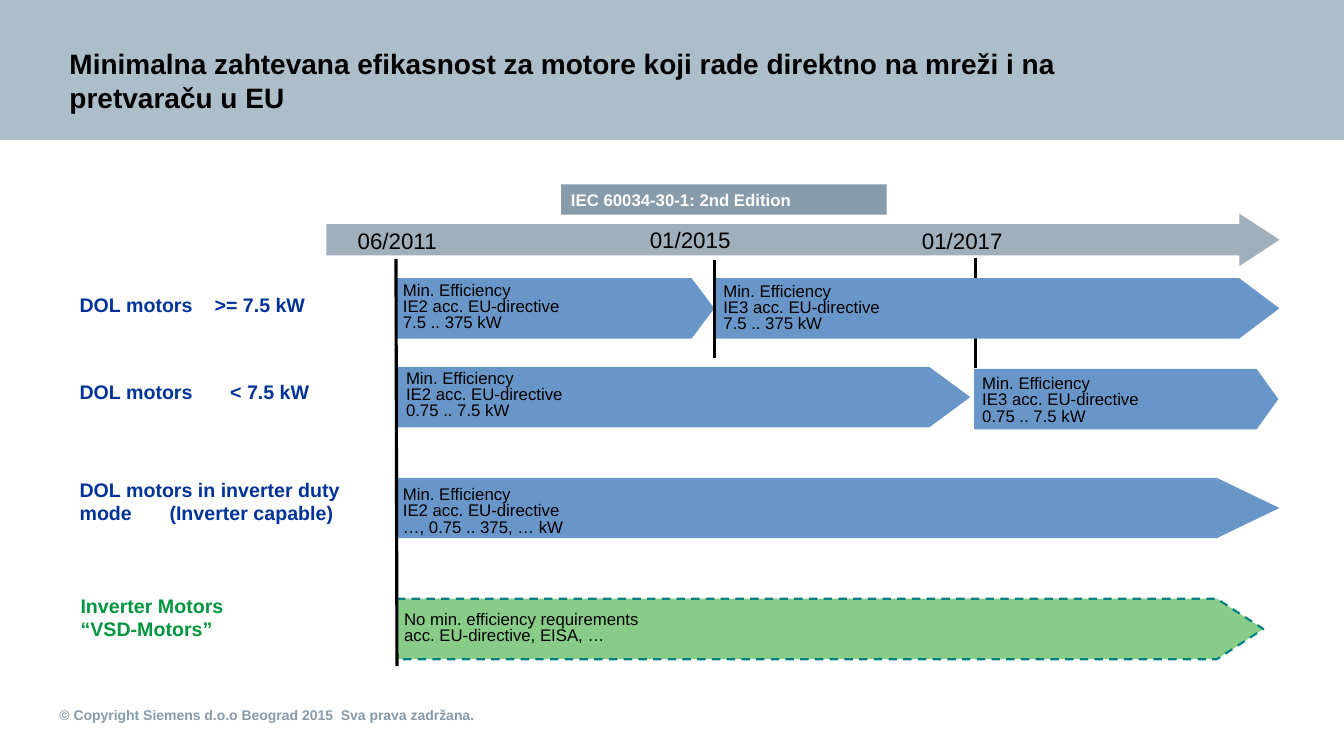
"""Builds the timeline slide of minimum motor efficiency requirements in the EU."""
from dataclasses import dataclass

from lxml import etree
from pptx import Presentation
from pptx.dml.color import RGBColor
from pptx.enum.dml import MSO_LINE
from pptx.enum.shapes import MSO_CONNECTOR, MSO_SHAPE
from pptx.enum.text import MSO_ANCHOR, PP_ALIGN
from pptx.oxml.ns import qn
from pptx.shapes.autoshape import Shape
from pptx.slide import Slide
from pptx.util import Pt

RECTANGLE = MSO_SHAPE.RECTANGLE
PENTAGON = MSO_SHAPE.PENTAGON
RIGHT_ARROW = MSO_SHAPE.RIGHT_ARROW
STRAIGHT = MSO_CONNECTOR.STRAIGHT
DASH = MSO_LINE.DASH
TOP, MIDDLE, BOTTOM = MSO_ANCHOR.TOP, MSO_ANCHOR.MIDDLE, MSO_ANCHOR.BOTTOM
LEFT = PP_ALIGN.LEFT

BLACK = RGBColor(0x00, 0x00, 0x00)
WHITE = RGBColor(0xFF, 0xFF, 0xFF)
BAND = RGBColor(0xAD, 0xBE, 0xCB)
SLATE = RGBColor(0x87, 0x9B, 0xAA)
BLUE = RGBColor(0x69, 0x96, 0xC8)
GREEN = RGBColor(0x88, 0xCC, 0x88)
TEAL = RGBColor(0x00, 0x80, 0x80)
NAVY = RGBColor(0x00, 0x33, 0x99)
LEAF = RGBColor(0x00, 0x96, 0x3F)

FONT = "Arial"
PAGE_WIDTH, PAGE_HEIGHT = 960.48, 540
BAND_HEIGHT = 100
PERIOD_HEIGHT = 43.2


@dataclass(frozen=True)
class Frame:
    left: float
    top: float
    width: float
    height: float


@dataclass(frozen=True)
class Period:
    left: float
    top: float
    width: float
    point: float
    caption: Frame
    text: str
    fill: RGBColor = BLUE
    outline: RGBColor | None = None


@dataclass(frozen=True)
class Label:
    frame: Frame
    text: str
    color: RGBColor = NAVY
    tab: float | None = None


@dataclass(frozen=True)
class Marker:
    left: float
    top: float
    bottom: float
    shift: float = 0


PERIODS = [
    Period(283, 198.7, 227.5, 0.377, Frame(282.2, 205.2, 193.7, 29.5),
           "Min. Efficiency\nIE2 acc. EU-directive\n7.5 .. 375 kW"),
    Period(511.2, 198.7, 403.2, 0.667, Frame(511.2, 203.8, 350.6, 33.8),
           "Min. Efficiency\nIE3 acc. EU-directive\n7.5 .. 375 kW"),
    Period(283.7, 262.1, 409.7, 0.678, Frame(284.4, 265, 346.3, 35.3),
           "Min. Efficiency\nIE2 acc. EU-directive\n0.75 .. 7.5 kW"),
    Period(696.2, 263.5, 217.4, 0.36, Frame(696.2, 267.8, 185.8, 37.4),
           "Min. Efficiency\nIE3 acc. EU-directive\n0.75 .. 7.5 kW"),
    Period(284.4, 341.3, 630, 1.042, Frame(282.2, 348.5, 535.7, 34.6),
           "Min. Efficiency\nIE2 acc. EU-directive\n…, 0.75 .. 375, … kW"),
    Period(283.7, 427.7, 619.2, 0.769, Frame(283, 429.8, 394.6, 38.2),
           "No min. efficiency requirements\nacc. EU-directive, EISA, …", GREEN, TEAL),
]

LABELS = [
    Label(Frame(56.9, 209.5, 191.5, 17.3), "DOL motors\t>= 7.5 kW", tab=96.5),
    Label(Frame(56.9, 271.4, 191.5, 17.3), "DOL motors\t< 7.5 kW", tab=107.6),
    Label(Frame(56.9, 341.3, 225.4, 33.8),
          "DOL motors in inverter duty mode\t(Inverter capable)", tab=64.3),
    Label(Frame(57.6, 424.1, 218.2, 33.8), "Inverter Motors\n“VSD-Motors”", LEAF),
]

DATES = [
    Label(Frame(255.6, 162, 56.9, 19.4), "06/2011", BLACK),
    Label(Frame(464.4, 161.3, 58.3, 19.4), "01/2015", BLACK),
    Label(Frame(658.8, 162, 58.3, 19.4), "01/2017", BLACK),
]

MARKER_2017 = Marker(697, 184.3, 262.8)
FRONT_MARKERS = [Marker(283, 185, 475.9, shift=0.7), Marker(510.5, 185.8, 255.6)]


def write(box: Shape, text: str, *, size: float, color: RGBColor = BLACK, bold: bool = False,
          anchor: MSO_ANCHOR = TOP, insets: tuple[float, float, float, float] = (0, 0, 0, 0),
          spacing: float | None = None, wrap: bool = True, tab: float | None = None) -> None:
    """Fill a box with text, one paragraph per line."""
    frame = box.text_frame
    frame.word_wrap = wrap
    frame.vertical_anchor = anchor
    frame.margin_left, frame.margin_top, frame.margin_right, frame.margin_bottom = map(Pt, insets)
    frame.text = text
    for para in frame.paragraphs:
        para.alignment = LEFT
        if spacing is not None:
            para.line_spacing = spacing
        if tab is not None:
            stops = etree.SubElement(para._p.get_or_add_pPr(), qn("a:tabLst"))
            etree.SubElement(stops, qn("a:tab"), pos=str(Pt(tab)), algn="l")
        para.font.name = FONT
        para.font.size = Pt(size)
        para.font.bold = bold
        para.font.color.rgb = color


def add_box(page: Slide, frame: Frame) -> Shape:
    """Add an empty text box."""
    return page.shapes.add_textbox(Pt(frame.left), Pt(frame.top), Pt(frame.width), Pt(frame.height))


def add_figure(page: Slide, kind: MSO_SHAPE, frame: Frame, fill: RGBColor,
               adjustments: tuple[float, ...] = ()) -> Shape:
    """Add a flat filled shape without outline."""
    figure = page.shapes.add_shape(
        kind, Pt(frame.left), Pt(frame.top), Pt(frame.width), Pt(frame.height))
    figure.shadow.inherit = False
    figure.fill.solid()
    figure.fill.fore_color.rgb = fill
    figure.line.fill.background()
    for index, value in enumerate(adjustments):
        figure.adjustments[index] = value
    return figure


def add_marker(page: Slide, marker: Marker) -> None:
    """Add a date line down the chart."""
    line = page.shapes.add_connector(STRAIGHT, Pt(marker.left), Pt(marker.top),
                                     Pt(marker.left + marker.shift), Pt(marker.bottom))
    line.line.color.rgb = BLACK
    line.line.width = Pt(2.25)
    etree.SubElement(line._element.spPr, qn("a:effectLst"))


def add_period(page: Slide, period: Period) -> None:
    """Add a pointed period bar and its caption."""
    bar = add_figure(page, PENTAGON, Frame(period.left, period.top, period.width, PERIOD_HEIGHT),
                     period.fill, (period.point,))
    if period.outline is not None:
        bar.line.color.rgb = period.outline
        bar.line.width = Pt(1.5)
        bar.line.dash_style = DASH
    caption = add_figure(page, RECTANGLE, period.caption, period.fill)
    write(caption, period.text, size=12, anchor=MIDDLE, insets=(5.76, 0, 0, 0), spacing=0.8)


def add_timeline(page: Slide) -> None:
    """Add the time arrow, its dates and the standard's banner."""
    arrow = add_figure(page, RIGHT_ARROW, Frame(233.3, 152.6, 681.1, 37.4), SLATE, (0.597, 0.764))
    color = arrow.fill._xPr.find(".//" + qn("a:srgbClr"))
    etree.SubElement(color, qn("a:alpha"), val="80000")
    for date in DATES:
        write(add_box(page, date.frame), date.text, size=16, color=date.color, wrap=False)
    banner = add_figure(page, RECTANGLE, Frame(401, 131.8, 232.6, 21.6), SLATE)
    write(banner, "IEC 60034-30-1: 2nd Edition", size=12, color=WHITE, bold=True,
          insets=(7.2, 3.6, 7.2, 3.6))


def main() -> None:
    """Build and save the deck."""
    deck = Presentation()
    deck.slide_width, deck.slide_height = Pt(PAGE_WIDTH), Pt(PAGE_HEIGHT)
    page = deck.slides.add_slide(deck.slide_layouts[6])
    header = add_figure(page, RECTANGLE, Frame(0, 0, PAGE_WIDTH, BAND_HEIGHT), BAND)
    write(header, "Minimalna zahtevana efikasnost za motore koji rade direktno na mreži i na "
          "pretvaraču u EU", size=20, bold=True, anchor=BOTTOM, insets=(49.7, 31, 167, 18.7))
    write(add_box(page, Frame(0, 488.2, 720, 33.8)),
          "© Copyright Siemens d.o.o Beograd 2015  Sva prava zadržana.",
          size=10, color=SLATE, bold=True, anchor=MIDDLE, insets=(42.5, 11.5, 167, 0))
    add_marker(page, MARKER_2017)
    add_timeline(page)
    for period in PERIODS:
        add_period(page, period)
    for marker in FRONT_MARKERS:
        add_marker(page, marker)
    for label in LABELS:
        write(add_box(page, label.frame), label.text, size=14, color=label.color, bold=True,
              tab=label.tab)
    deck.save("out.pptx")


if __name__ == "__main__":
    main()
